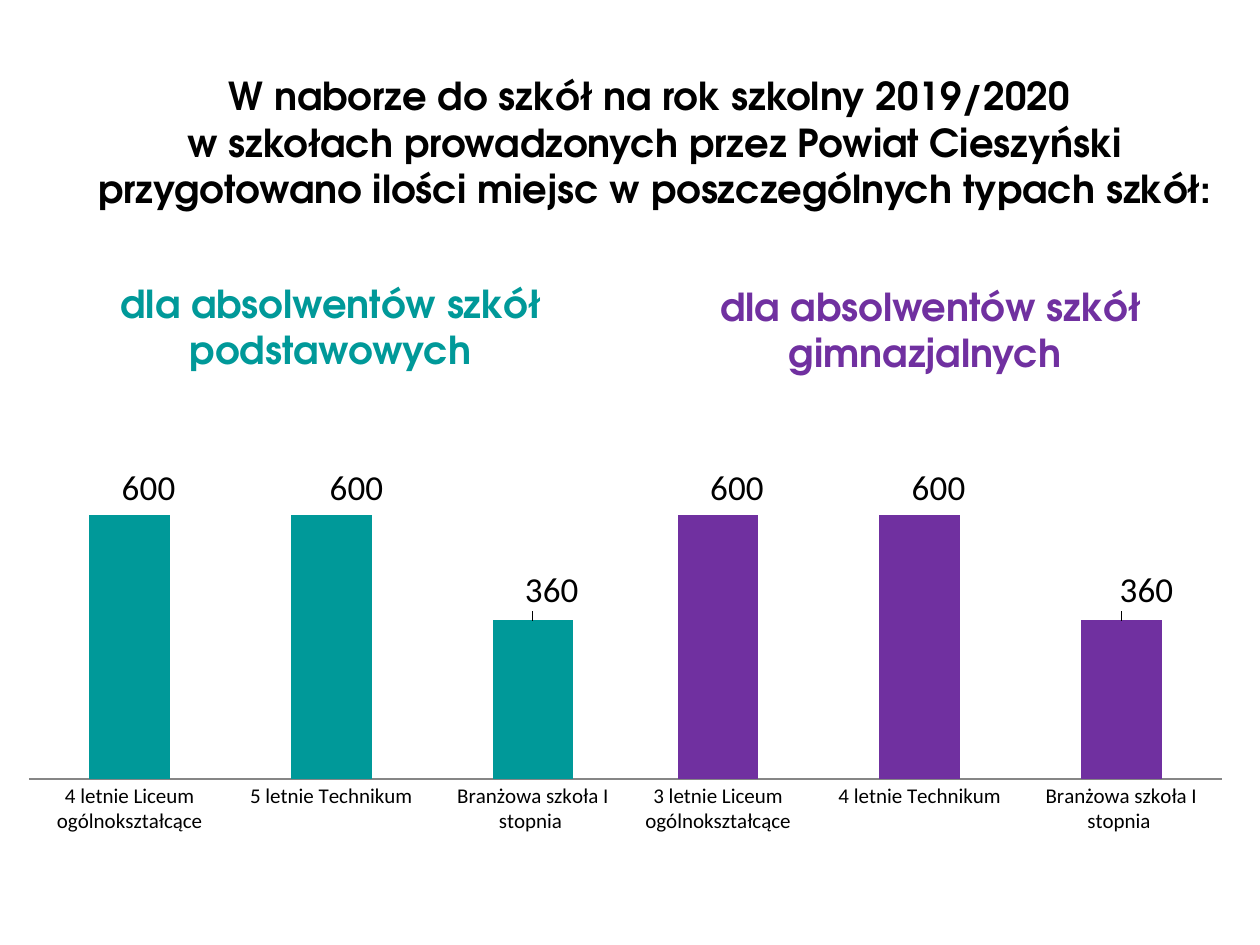
from dataclasses import dataclass

from lxml import etree
from pptx import Presentation
from pptx import util as u
from pptx.chart.data import CategoryChartData
from pptx.dml.color import RGBColor
from pptx.enum import chart as charts
from pptx.enum import text
from pptx.oxml.ns import qn


@dataclass(frozen=True)
class Theme:
    heading_font: str = "TeX Gyre Adventor"
    chart_font: str = "Calibri"
    black: str = "000000"
    teal: str = "009999"
    purple: str = "7030A0"
    axis: str = "868686"
    heading_size: int = 22
    chart_size: int = 10
    category_size: int = 12
    value_size: int = 20


@dataclass(frozen=True)
class Area:
    left: float
    top: float
    width: float
    height: float

    def place(self) -> tuple[int, int, int, int]:
        return (
            int(self.left * WIDTH),
            int(self.top * HEIGHT),
            int(self.width * WIDTH),
            int(self.height * HEIGHT),
        )


@dataclass(frozen=True)
class Group:
    heading: str
    heading_area: Area
    chart_area: Area
    color: str
    categories: tuple[str, ...]
    places: tuple[int, ...]
    label_shifts: tuple[tuple[float, float], ...]


THEME = Theme()
WIDTH, HEIGHT = u.Inches(10), u.Inches(7.5)
TITLE_AREA = Area(0.059, 0.07, 0.921, 0.16)
TITLE = (
    "W naborze do szkół na rok szkolny 2019/2020 \n"
    "w szkołach prowadzonych przez Powiat Cieszyński "
    "przygotowano ilości miejsc w poszczególnych typach szkół:"
)
VOCATIONAL = "Branżowa szkoła I stopnia "
PLACES = (600, 600, 360)
GROUPS = (
    Group(
        "dla absolwentów szkół podstawowych",
        Area(0.042, 0.29, 0.441, 0.11),
        Area(0.013, 0.49, 0.5, 0.4),
        THEME.teal,
        ("4 letnie Liceum ogólnokształcące", "5 letnie Technikum", VOCATIONAL),
        PLACES,
        ((0.03, 0), (0.04, 0), (0.03, -0.01)),
    ),
    Group(
        "dla absolwentów szkół gimnazjalnych ",
        Area(0.51, 0.293, 0.457, 0.11),
        Area(0.48, 0.49, 0.5, 0.4),
        THEME.purple,
        ("3 letnie Liceum ogólnokształcące", "4 letnie Technikum", VOCATIONAL),
        PLACES,
        ((0.03, 0), (0.03, 0), (0.04, -0.01)),
    ),
)


def style_font(font, name: str, size: int, color: str, bold: bool = False) -> None:
    font.name = name
    font.size = u.Pt(size)
    font.bold = bold
    font.color.rgb = RGBColor.from_string(color)


def write_heading(box, area: Area, words: str, color: str) -> None:
    box.left, box.top, box.width, box.height = area.place()
    frame = box.text_frame
    frame.text = words
    frame.word_wrap = True
    frame.auto_size = text.MSO_AUTO_SIZE.NONE
    frame.vertical_anchor = text.MSO_ANCHOR.TOP
    for para in frame.paragraphs:
        para.alignment = text.PP_ALIGN.CENTER
        for span in para.runs:
            style_font(span.font, THEME.heading_font, THEME.heading_size, color, True)


def manual_layout(**settings: object):
    layout = etree.Element(qn("c:layout"))
    manual = etree.SubElement(layout, qn("c:manualLayout"))
    for tag, value in settings.items():
        etree.SubElement(manual, qn(f"c:{tag}")).set("val", str(value))
    return layout


def fix_plot_area(chart) -> None:
    plot_area = chart.plots[0]._element.getparent()
    for layout in plot_area.findall(qn("c:layout")):
        plot_area.remove(layout)
    plot_area.insert(0, manual_layout(
        layoutTarget="inner", xMode="edge", yMode="edge", x=0.02, y=0.02, w=0.96, h=0.816,
    ))


def label_points(series, group: Group) -> None:
    for index, (across, down) in enumerate(group.label_shifts):
        label = series.points[index].data_label
        style_font(label.font, THEME.chart_font, THEME.value_size, THEME.black)
        label.position = charts.XL_LABEL_POSITION.OUTSIDE_END
        element = series._element.find(qn("c:dLbls")).findall(qn("c:dLbl"))[index]
        element.find(qn("c:idx")).addnext(manual_layout(x=across, y=down))


def draw_chart(page, group: Group) -> None:
    data = CategoryChartData()
    data.categories = group.categories
    data.add_series("Series 1", group.places)
    chart = page.shapes.add_chart(
        charts.XL_CHART_TYPE.COLUMN_CLUSTERED, *group.chart_area.place(), data
    ).chart
    chart.has_legend = False
    chart.has_title = False
    style_font(chart.font, THEME.chart_font, THEME.chart_size, THEME.black)

    plot = chart.plots[0]
    plot.gap_width = 150
    plot.vary_by_categories = False
    plot.has_data_labels = True
    plot.data_labels.show_value = True
    series = plot.series[0]
    series.format.fill.solid()
    series.format.fill.fore_color.rgb = RGBColor.from_string(group.color)
    label_points(series, group)

    values = chart.value_axis
    values.minimum_scale, values.maximum_scale = 0, 700
    values.has_major_gridlines = False
    values.visible = False
    categories = chart.category_axis
    categories.major_tick_mark = charts.XL_TICK_MARK.NONE
    categories.format.line.color.rgb = RGBColor.from_string(THEME.axis)
    style_font(categories.tick_labels.font, THEME.chart_font, THEME.category_size, THEME.black)
    fix_plot_area(chart)


def main() -> None:
    deck = Presentation()
    deck.slide_width, deck.slide_height = WIDTH, HEIGHT
    page = deck.slides.add_slide(deck.slide_layouts.get_by_name("Title Only"))
    write_heading(page.shapes.title, TITLE_AREA, TITLE, THEME.black)
    for group in GROUPS:
        box = page.shapes.add_textbox(*group.heading_area.place())
        write_heading(box, group.heading_area, group.heading, group.color)
    for group in GROUPS:
        draw_chart(page, group)
    deck.save("out.pptx")


if __name__ == "__main__":
    main()
